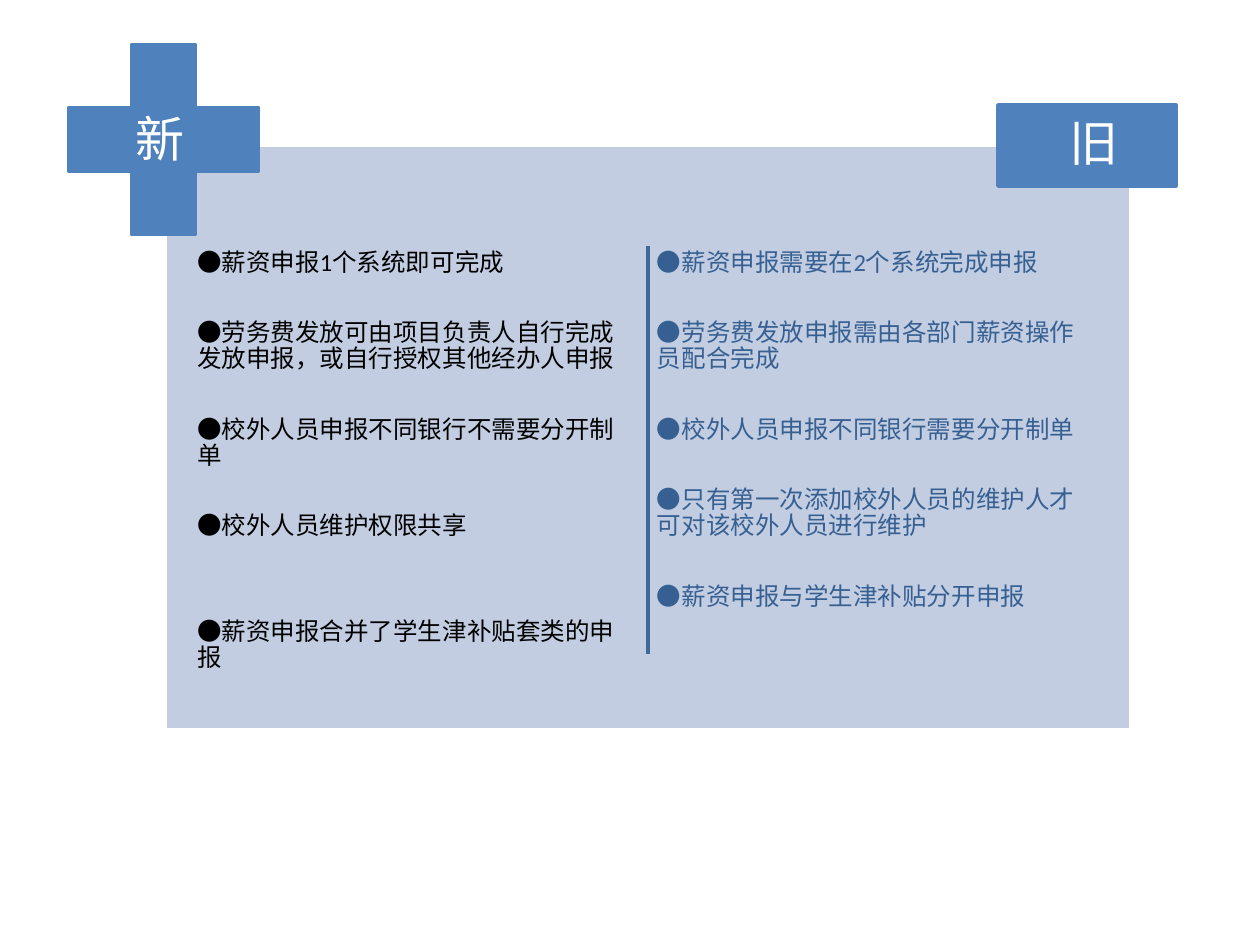
import pptx
import pptx.util
import pptx.dml.color
import pptx.enum.shapes
import pptx.enum.text
import pptx.oxml.ns
from lxml import etree

PX = 914400 // 126
COLORS = {"panel": "C2CDE1", "badge": "4F81BD", "divider": "3F6797",
          "old": "376092", "new": "000000", "white": "FFFFFF"}


def rgb(name):
    return pptx.dml.color.RGBColor.from_string(COLORS[name])


def fill_placeholder(placeholder, box, lines, size, color, inset):
    """Bring a placeholder to the front, place it and set plain left-aligned text."""
    placeholder.element.getparent().append(placeholder.element)
    placeholder.left, placeholder.top, placeholder.width, placeholder.height = [v * PX for v in box]
    text_frame = placeholder.text_frame
    text_frame.text = "\n".join(lines)
    text_frame.word_wrap = True
    text_frame.auto_size = pptx.enum.text.MSO_AUTO_SIZE.NONE
    text_frame.vertical_anchor = pptx.enum.text.MSO_ANCHOR.TOP
    text_frame.margin_left = text_frame.margin_right = inset[0] * PX
    text_frame.margin_top = text_frame.margin_bottom = inset[1] * PX
    for paragraph in text_frame.paragraphs:
        properties = paragraph._p.get_or_add_pPr()
        properties.set("marL", "0")
        properties.set("indent", "0")
        etree.SubElement(properties, pptx.oxml.ns.qn("a:buNone"))
        paragraph.space_before = pptx.util.Pt(0)
        for run in paragraph.runs:
            run.font.name = "Calibri"
            run.font.size = pptx.util.Pt(size)
            run.font.bold = False
            run.font.color.rgb = rgb(color)


presentation = pptx.Presentation()
presentation.slide_width = 1260 * PX
presentation.slide_height = 945 * PX
slide = presentation.slides.add_slide(presentation.slide_layouts[4])
title = slide.shapes.title
title.element.getparent().remove(title.element)

# Panel and the plus and minus badges
SHAPE = pptx.enum.shapes.MSO_SHAPE
for kind, box, fill, line in [
    (SHAPE.RECTANGLE, (165, 145, 966, 585), "panel", "white"),
    (SHAPE.CROSS, (69, 45, 189, 189), "badge", "badge"),
    (SHAPE.RECTANGLE, (998, 105, 178, 81), "badge", "badge"),
]:
    shape = slide.shapes.add_shape(kind, *[v * PX for v in box])
    shape.shadow.inherit = False
    shape.fill.solid()
    shape.fill.fore_color.rgb = rgb(fill)
    shape.line.color.rgb = rgb(line)
    shape.line.width = pptx.util.Pt(2)
    if kind == SHAPE.CROSS:
        shape.adjustments[0] = 0.33

# Divider between the columns
divider = slide.shapes.add_connector(
    pptx.enum.shapes.MSO_CONNECTOR.STRAIGHT, 648 * PX, 246 * PX, 648 * PX, 654 * PX)
divider.line.color.rgb = rgb("divider")
divider.line.width = pptx.util.Pt(2)
etree.SubElement(divider.element.spPr, pptx.oxml.ns.qn("a:effectLst"))

# Headings and lists
new_points = [
    "●薪资申报1个系统即可完成",
    "●劳务费发放可由项目负责人自行完成发放申报，或自行授权其他经办人申报",
    "●校外人员申报不同银行不需要分开制单",
    "●校外人员维护权限共享",
    "●薪资申报合并了学生津补贴套类的申报",
]
old_points = [
    "●薪资申报需要在2个系统完成申报",
    "●劳务费发放申报需由各部门薪资操作员配合完成",
    "●校外人员申报不同银行需要分开制单",
    "●只有第一次添加校外人员的维护人才可对该校外人员进行维护",
    "●薪资申报与学生津补贴分开申报",
]
placeholders = {p.placeholder_format.idx: p for p in slide.placeholders}
for index, heading, heading_box, points, left, color in [
    (1, "新", (123, 103, 79, 72), new_points, 193, "new"),
    (3, "旧", (1057, 106, 59, 72), old_points, 653, "old"),
]:
    fill_placeholder(placeholders[index], heading_box, [heading], 28, "white", (13, 6))
    column = placeholders[index + 1]
    fill_placeholder(column, (left, 246, 449, 427), points, 14, color, (4, 4))
    for paragraph in column.text_frame.paragraphs:
        paragraph.line_spacing = 0.9
        paragraph.space_after = pptx.util.Pt(25)

# Wider gap above the last new point
placeholders[2].text_frame.paragraphs[-2].space_after = pptx.util.Pt(45)

presentation.save("out.pptx")
